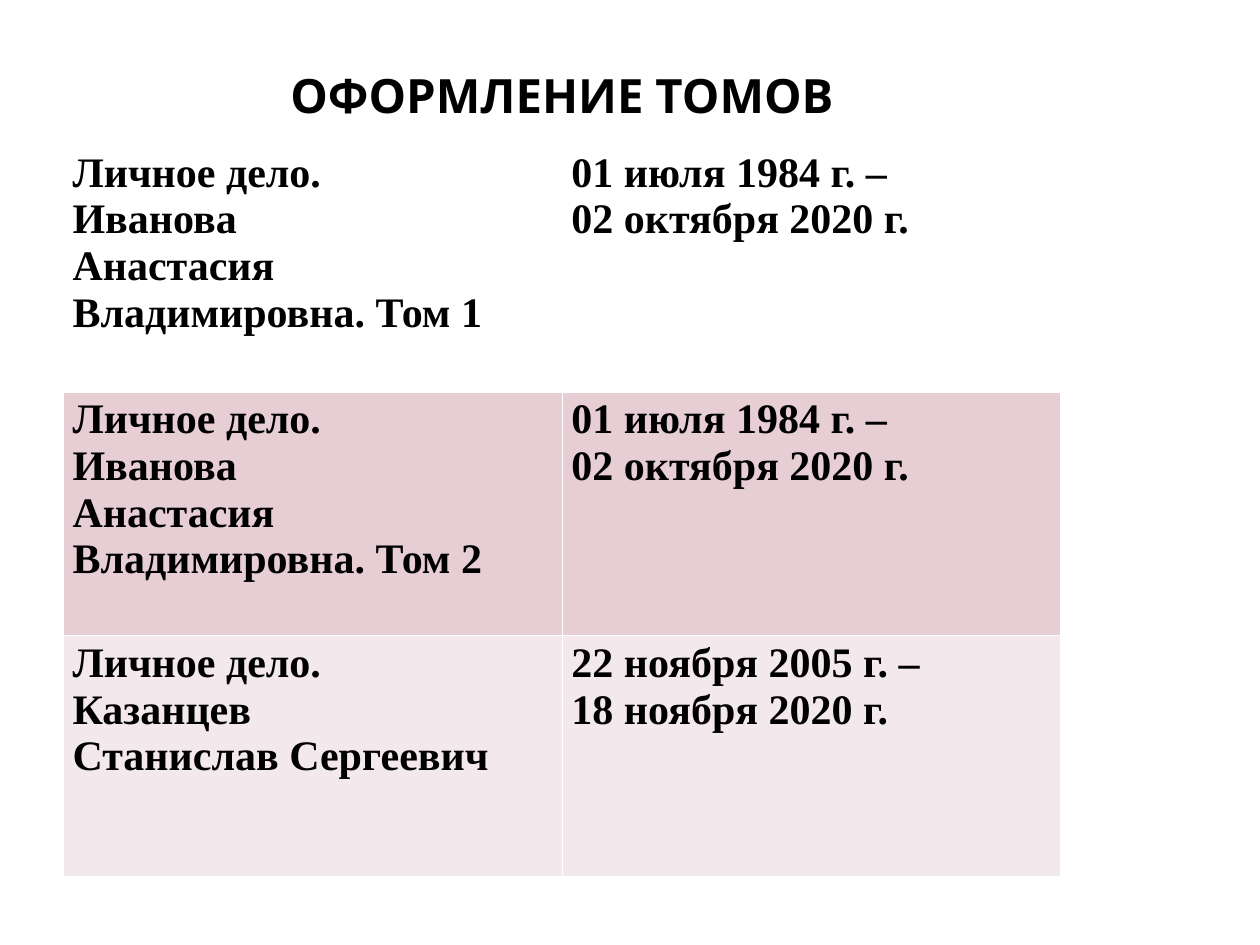
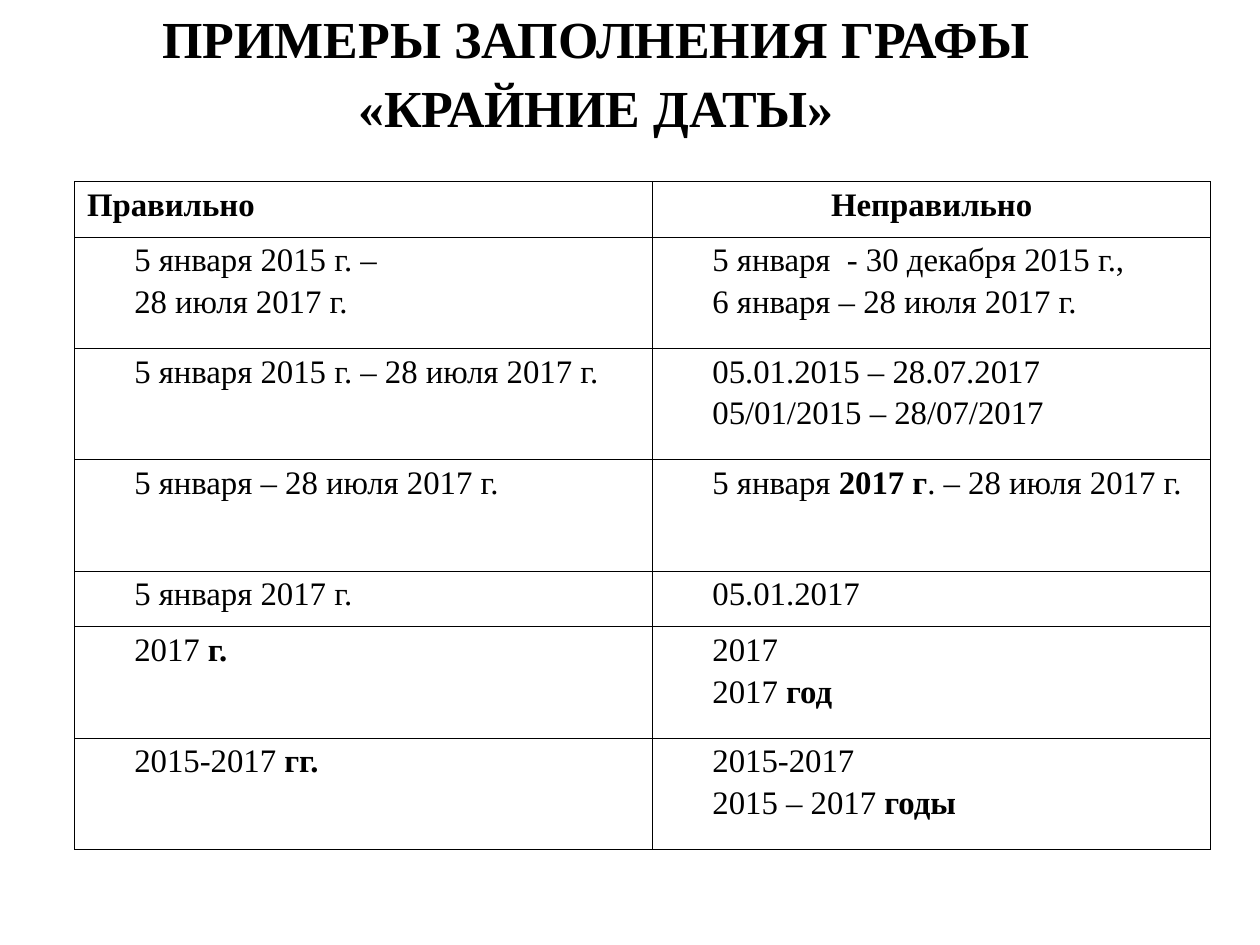
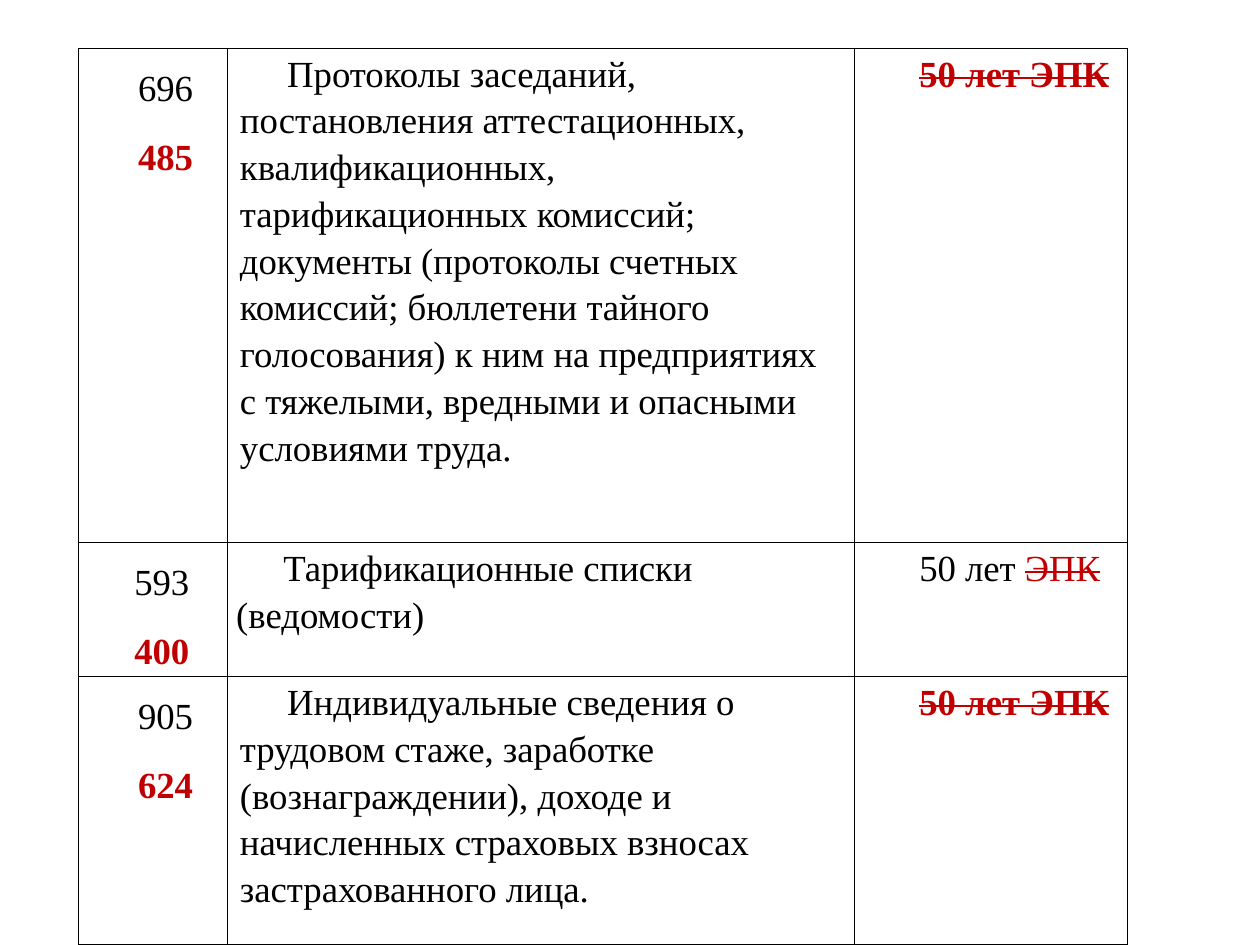
from dataclasses import dataclass, replace

from lxml import etree
from pptx import Presentation
from pptx import util as u
from pptx.dml.color import RGBColor
from pptx.enum import text
from pptx.oxml import ns

Cm, Pt = u.Cm, u.Pt
ALIGN = text.PP_ALIGN

COLOURS = {
    "ink": "000000",
    "paper": "FFFFFF",
    "deleted": "C00000",
    "band_dark": "E6CED4",
    "band_light": "F3E8EB",
}
SERIF = "Times New Roman"
SANS = "Karla"
TITLE_ONLY, BLANK = 5, 6


def colour(name):
    return RGBColor.from_string(COLOURS[name])


@dataclass(frozen=True)
class CellStyle:
    size: float
    bold: bool = False
    align: object = ALIGN.LEFT
    indent: float = 0
    line_spacing: float = 1.0
    space_after: float = 0
    margins: tuple = (0.25, 0.13)  # sides, top and bottom
    fill: str = ""
    border: str = "ink"
    bottom_width: float = 1


class Deck:
    def __init__(self):
        self.presentation = Presentation()
        self.presentation.slide_width = Cm(33.87)
        self.presentation.slide_height = Cm(25.4)
        self.slide = None

    def new_slide(self, layout):
        layouts = self.presentation.slide_layouts
        self.slide = self.presentation.slides.add_slide(layouts[layout])

    def title(self, wording, width, height, size, font_name, line_spacing=1.0):
        shape = self.slide.shapes.title
        shape.left, shape.top = Cm(1.7), Cm(1.19)
        shape.width, shape.height = Cm(width), Cm(height)
        frame = shape.text_frame
        frame.text = wording
        frame.word_wrap = True
        frame.auto_size = text.MSO_AUTO_SIZE.NONE
        frame.vertical_anchor = text.MSO_ANCHOR.BOTTOM
        frame.margin_left = frame.margin_right = Cm(0.13)
        frame.margin_top = frame.margin_bottom = 0
        paragraph = frame.paragraphs[0]
        paragraph.alignment = ALIGN.CENTER
        paragraph.line_spacing = line_spacing
        self.set_font(paragraph.font, size, font_name, True)

    def set_font(self, font, size, name, bold):
        font.size, font.name, font.bold = Pt(size), name, bold
        font.color.rgb = colour("ink")

    def table(self, left, top, widths, heights):
        frame = self.slide.shapes.add_table(
            len(heights), len(widths), Cm(left), Cm(top),
            Cm(sum(widths)), Cm(sum(heights)))
        table = frame.table
        table.first_row = table.horz_banding = False
        for column, width in zip(table.columns, widths):
            column.width = Cm(width)
        for row, height in zip(table.rows, heights):
            row.height = Cm(height)
        return table

    def fill_cell(self, cell, paragraphs, style):
        """A paragraph is a string or a list of (text, marks) runs.

        Marks: b bold, r red, s struck through.
        """
        sides, ends = style.margins
        cell.margin_left = cell.margin_right = Cm(sides)
        cell.margin_top = cell.margin_bottom = Cm(ends)
        if style.fill:
            cell.fill.solid()
            cell.fill.fore_color.rgb = colour(style.fill)
        else:
            cell.fill.background()
        self.borders(cell, style)
        frame = cell.text_frame
        for index, runs in enumerate(paragraphs):
            paragraph = frame.add_paragraph() if index else frame.paragraphs[0]
            self.set_paragraph(paragraph, runs, style)

    def set_paragraph(self, paragraph, runs, style):
        paragraph.alignment = style.align
        paragraph.line_spacing = style.line_spacing
        paragraph.space_after = Pt(style.space_after)
        if style.indent:
            properties = paragraph._p.get_or_add_pPr()
            properties.set("marL", "0")
            properties.set("indent", str(Cm(style.indent)))
        self.set_font(paragraph.font, style.size, SERIF, style.bold)
        if isinstance(runs, str):
            runs = [(runs, "")]
        for wording, marks in runs:
            run = paragraph.add_run()
            run.text = wording
            font = (paragraph if len(runs) == 1 else run).font
            if "b" in marks:
                font.bold = True
            if "r" in marks:
                font.color.rgb = colour("deleted")
            if "s" in marks:
                font._element.set("strike", "sngStrike")

    def borders(self, cell, style):
        properties = cell._tc.get_or_add_tcPr()
        for index, side in enumerate(("lnL", "lnR", "lnT", "lnB")):
            width = style.bottom_width if side == "lnB" else 1
            line = etree.Element(ns.qn(f"a:{side}"), w=str(Pt(width)))
            fill = etree.SubElement(line, ns.qn("a:solidFill"))
            etree.SubElement(fill, ns.qn("a:srgbClr"), val=COLOURS[style.border])
            properties.insert(index, line)


# Volumes of one personal file
def volumes_slide(deck):
    deck.new_slide(TITLE_ONLY)
    deck.title("ОФОРМЛЕНИЕ ТОМОВ", 26.82, 2.11, 36, SANS)
    long_service = ["01 июля 1984 г. –", "02 октября 2020 г."]
    files = [
        (["Иванова", "Анастасия Владимировна. Том 1"], long_service, "paper"),
        (["Иванова", "Анастасия Владимировна. Том 2"], long_service, "band_dark"),
        (["Казанцев", "Станислав Сергеевич"],
         ["22 ноября 2005 г. –", "18 ноября 2020 г."], "band_light"),
    ]
    table = deck.table(1.7, 3.89, [13.41] * 2, [6.63, 6.55, 6.48])
    for row, (person, dates, fill) in enumerate(files):
        style = CellStyle(32, bold=True, fill=fill, border="paper",
                          bottom_width=1 if row else 3)
        deck.fill_cell(table.cell(row, 0), ["Личное дело."] + person, style)
        deck.fill_cell(table.cell(row, 1), dates, style)


# Right and wrong date ranges
def dates_slide(deck):
    deck.new_slide(TITLE_ONLY)
    deck.title("ПРИМЕРЫ ЗАПОЛНЕНИЯ ГРАФЫ «КРАЙНИЕ ДАТЫ»",
               28.65, 2.51, 39.6, SERIF, line_spacing=1.1)
    examples = [
        (["5 января 2015 г. –", "28 июля 2017 г."],
         ["5 января  - 30 декабря 2015 г.,", "6 января – 28 июля 2017 г."]),
        (["5 января 2015 г. – 28 июля 2017 г."],
         ["05.01.2015 – 28.07.2017", "05/01/2015 – 28/07/2017"]),
        (["5 января – 28 июля 2017 г."],
         [[("5 января ", ""), ("2017 г", "b"), (". – 28 июля 2017 г.", "")]]),
        (["5 января 2017 г."], ["05.01.2017"]),
        ([[("2017 ", ""), ("г.", "b")]],
         ["2017", [("2017 ", ""), ("год", "b")]]),
        ([[("2015-2017 ", ""), ("гг.", "b")]],
         ["2015-2017", [("2015 – 2017 ", ""), ("годы", "b")]]),
    ]
    single, double = 1.5, 2.99
    table = deck.table(2.01, 4.88, [15.54, 14.99],
                       [single] + [double] * 3 + [single] + [double] * 2)
    body = CellStyle(25, indent=1.27, line_spacing=1.15, margins=(0.33, 0))
    header = replace(body, bold=True, indent=0)
    deck.fill_cell(table.cell(0, 0), ["Правильно"], header)
    deck.fill_cell(table.cell(0, 1), ["Неправильно"],
                   replace(header, align=ALIGN.CENTER))
    for row, example in enumerate(examples, start=1):
        for column, paragraphs in enumerate(example):
            deck.fill_cell(table.cell(row, column), paragraphs, body)


# Old and new article numbers with retention terms
def retention_slide(deck):
    deck.new_slide(BLANK)
    cancelled = [("50 лет ЭПК", "brs")]
    articles = [
        ("696", "485",
         "Протоколы заседаний, постановления аттестационных, "
         "квалификационных, тарификационных комиссий; документы (протоколы "
         "счетных комиссий; бюллетени тайного голосования) к ним на "
         "предприятиях с тяжелыми, вредными и опасными условиями труда.",
         cancelled, (0.33, 0)),
        ("593", "400", "Тарификационные списки (ведомости)",
         [("50 лет ", ""), ("ЭПК", "rs"), (" ", "")], (0.23, 0)),
        ("905", "624",
         "Индивидуальные сведения о трудовом стаже, заработке "
         "(вознаграждении), доходе и начисленных страховых взносах "
         "застрахованного лица.",
         cancelled, (0.33, 0)),
    ]
    table = deck.table(2.11, 1.3, [4.01, 16.84, 7.34], [13.28, 3.61, 7.21])
    for row, (old, new, documents, term, margins) in enumerate(articles):
        body = CellStyle(28, indent=1.27, line_spacing=1.15, space_after=6,
                         margins=margins)
        number = replace(body, align=ALIGN.JUSTIFY, line_spacing=1.5)
        deck.fill_cell(table.cell(row, 0), [old, [(new, "br")]], number)
        deck.fill_cell(table.cell(row, 1), [documents], body)
        deck.fill_cell(table.cell(row, 2), [term],
                       replace(body, align=ALIGN.CENTER))


def main():
    deck = Deck()
    volumes_slide(deck)
    dates_slide(deck)
    retention_slide(deck)
    deck.presentation.save("out.pptx")


if __name__ == "__main__":
    main()
